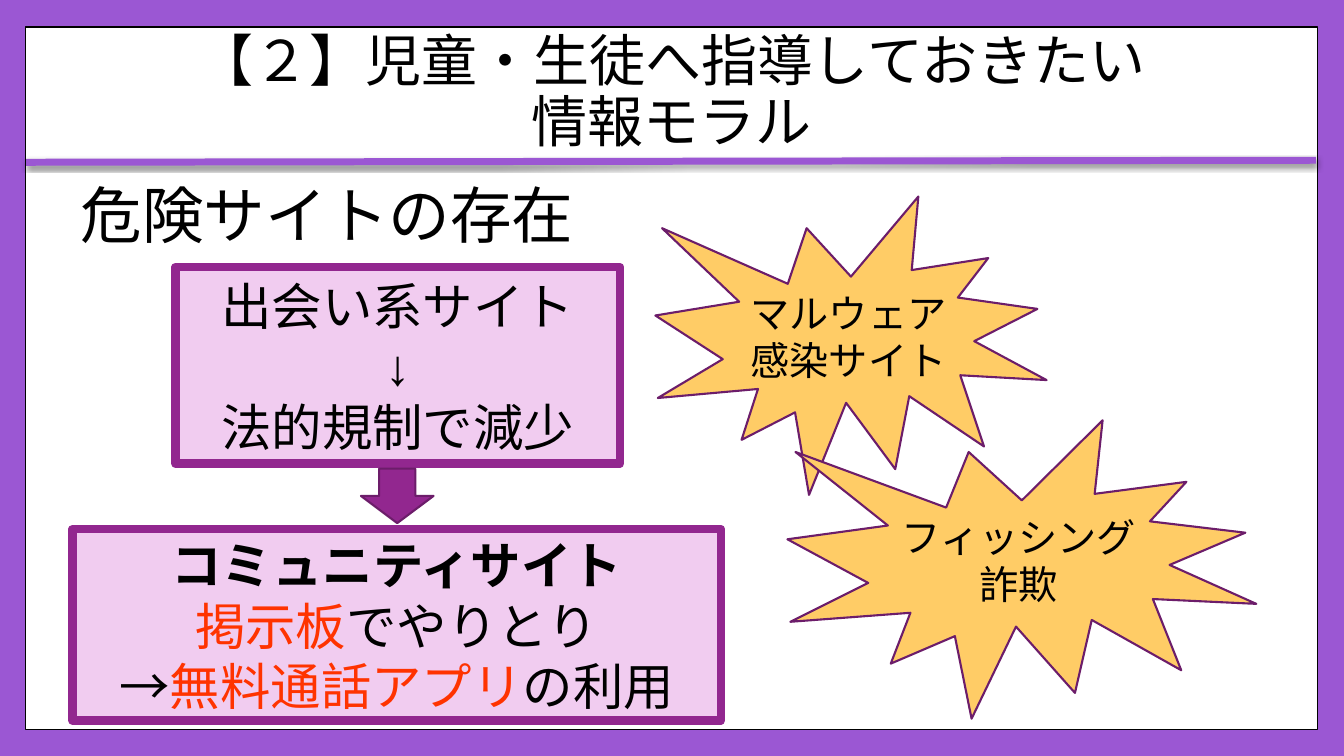
from lxml import etree
from pptx import Presentation
from pptx.dml.color import RGBColor
from pptx.enum import shapes, text
from pptx.oxml import ns
from pptx.util import Inches, Pt

PURPLE, PLUM, DARK = "9B57D3", "92278F", "6C1D6A"
PINK, GOLD, RED = "F1CCF0", "FFCC66", "FF3300"
BLACK, WHITE = "000000", "FFFFFF"
KIND = shapes.MSO_SHAPE

# Each paragraph is a list of (words, colour) runs.
TITLE = [[("【２】児童・生徒へ指導しておきたい\v情報モラル", BLACK)]]
HEAD = [[("危険サイトの存在", BLACK)]]
DATING = [[("出会い系サイト", BLACK)], [("↓", BLACK)], [("法的規制で減少", BLACK)]]
SOCIAL = [
    [("コミュニティサイト", BLACK)],
    [("掲示板", RED), ("でやりとり", BLACK)],
    [("→", BLACK), ("無料通話アプリ", RED), ("の利用", BLACK)],
]
MALWARE = [[("マルウェア", BLACK)], [("感染サイト", BLACK)]]
PHISHING = [[("フィッシング", BLACK)], [("詐欺", BLACK)]]

# kind, box, fill, line colour, line width, paragraphs, text size
SHAPES = [
    (KIND.RECTANGLE, (1.74, 2.65, 4.41, 1.95), PINK, PLUM, 6, DATING, 36),
    (KIND.RECTANGLE, (0.72, 5.25, 6.43, 1.9), PINK, PLUM, 6, SOCIAL, 36),
    (KIND.DOWN_ARROW, (3.58, 4.65, 0.72, 0.54), PLUM, DARK, 1.5, [], 0),
    (KIND.EXPLOSION1, (6.5, 1.95, 3.88, 2.96), GOLD, DARK, 1.5, MALWARE, 28),
    (KIND.EXPLOSION1, (7.81, 4.17, 4.65, 2.96), GOLD, DARK, 1.5, PHISHING, 28),
]


def rgb(code):
    return RGBColor.from_string(code)


def write(frame, paras, size, font="Arial", align=text.PP_ALIGN.CENTER,
          anchor=text.MSO_ANCHOR.MIDDLE, space=1.0):
    frame.word_wrap = True
    frame.vertical_anchor = anchor
    for i, runs in enumerate(paras):
        para = frame.paragraphs[0] if i == 0 else frame.add_paragraph()
        para.alignment = align
        para.line_spacing = space
        para.font.size = Pt(size)
        para.font.name = font
        para.font.bold = paras is SOCIAL and i == 0
        para.font.color.rgb = rgb(BLACK)
        for words, color in runs:
            for j, part in enumerate(words.split("\v")):
                if j:
                    para.add_line_break()
                run = para.add_run()
                run.text = part
                if color != BLACK:
                    run.font.color.rgb = rgb(color)


def draw(slide, kind, box, fill, line, width, paras=(), size=0):
    shape = slide.shapes.add_shape(kind, *map(Inches, box))
    shape.shadow.inherit = False
    shape.fill.solid()
    shape.fill.fore_color.rgb = rgb(fill)
    shape.line.color.rgb = rgb(line)
    shape.line.width = Pt(width)
    write(shape.text_frame, paras, size)


def label(slide, box, *args, **opts):
    frame = slide.shapes.add_textbox(*map(Inches, box)).text_frame
    write(frame, *args, **opts)
    return frame


def rule(slide, start, end):
    """Draw the line under the title, with a soft shadow below it."""
    line = slide.shapes.add_connector(
        shapes.MSO_CONNECTOR.STRAIGHT, *map(Inches, start + end))
    line.line.color.rgb = rgb(PURPLE)
    line.line.width = Pt(5)
    props = line._element.spPr
    effects = etree.SubElement(props, ns.qn("a:effectLst"))
    shade = etree.SubElement(
        effects, ns.qn("a:outerShdw"), blurRad=str(Pt(3)), dist=str(Pt(2)),
        dir="5400000", rotWithShape="0")
    tint = etree.SubElement(shade, ns.qn("a:srgbClr"), val=BLACK)
    etree.SubElement(tint, ns.qn("a:alpha"), val="45000")


def main():
    deck = Presentation()
    deck.slide_width, deck.slide_height = Inches(13.33), Inches(7.5)
    slide = deck.slides.add_slide(deck.slide_layouts[6])
    slide.background.fill.solid()
    slide.background.fill.fore_color.rgb = rgb(PURPLE)

    draw(slide, KIND.RECTANGLE, (0.25, 0.27, 12.82, 6.97), WHITE, BLACK, 1)
    rule(slide, (0.26, 1.61), (13.05, 1.59))
    label(slide, (0.26, 0.36, 12.8, 1.14), TITLE, 40, font="Cabin", space=0.9)
    head = label(slide, (0.65, 1.79, 12, 5.34), HEAD, 44, space=0.9,
                 align=text.PP_ALIGN.LEFT, anchor=text.MSO_ANCHOR.TOP)
    head.margin_left = Inches(0.15)
    for item in SHAPES:
        draw(slide, *item)
    deck.save("out.pptx")


if __name__ == "__main__":
    main()
